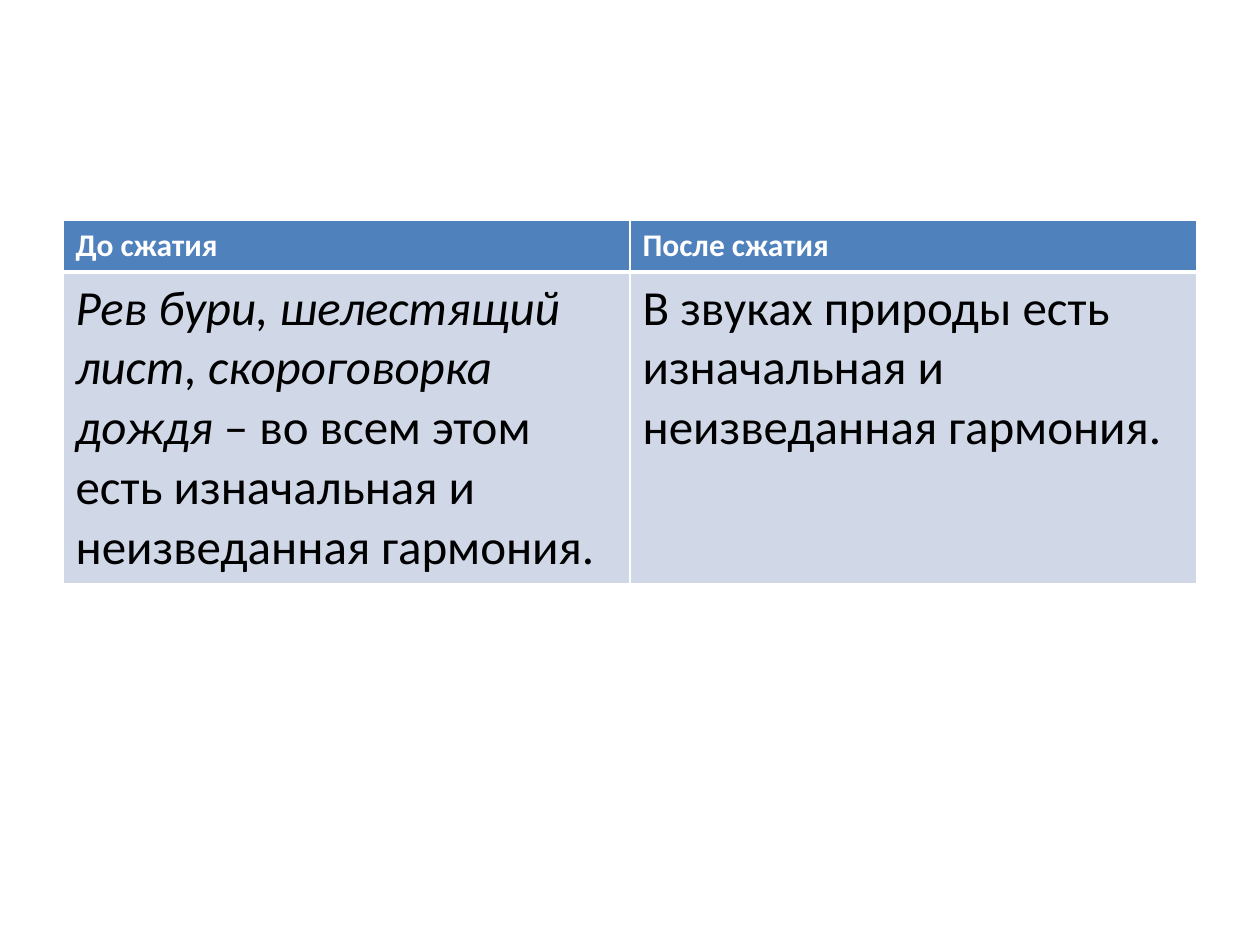
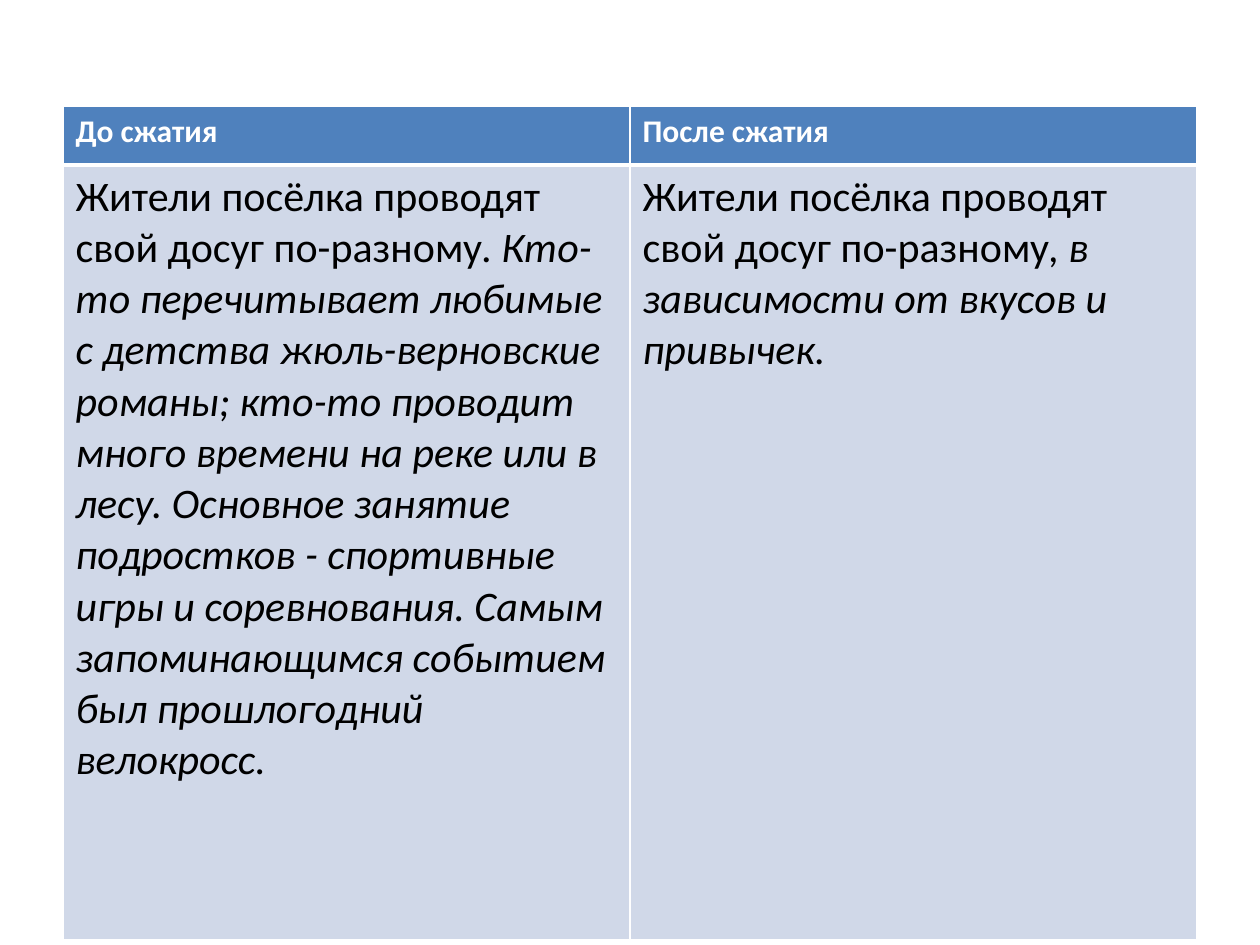
import pptx
import pptx.dml.color
import pptx.oxml
import pptx.oxml.ns
import pptx.util
from pptx.util import Inches

# Content: each body cell is a list of (text, italic) runs
HEADINGS = ("До сжатия", "После сжатия")
SLIDES = [
    {
        "top": 1.75, "rows": (0.41, 2.43), "size": 28,
        "before": [
            ("Рев бури, шелестящий лист, скороговорка дождя ", True),
            ("– во всем этом есть изначальная и неизведанная гармония.", False),
        ],
        "after": [
            ("В звуках природы есть изначальная и неизведанная гармония.", False),
        ],
    },
    {
        "top": 0.84, "rows": (0.47, 6.15), "size": 24,
        "before": [
            ("Жители посёлка проводят свой досуг по-разному. ", False),
            ("Кто-то перечитывает любимые с детства жюль-верновские романы; "
             "кто-то проводит много времени на реке или в лесу. "
             "Основное занятие подростков - спортивные игры и соревнования. "
             "Самым запоминающимся событием был прошлогодний велокросс.", True),
        ],
        "after": [
            ("Жители посёлка проводят свой досуг по-разному, ", False),
            ("в зависимости от вкусов и привычек.", True),
        ],
    },
]

# Shared style
FONT = "Calibri"
WHITE = pptx.dml.color.RGBColor(0xFF, 0xFF, 0xFF)
BLACK = pptx.dml.color.RGBColor(0x00, 0x00, 0x00)
HEADER_BLUE = pptx.dml.color.RGBColor(0x4F, 0x81, 0xBD)
BODY_BLUE = pptx.dml.color.RGBColor(0xD0, 0xD8, 0xE8)
HEADER_SIZE = 18
TABLE_LEFT, TABLE_WIDTH = 0.5, 9
THIN, THICK = 1, 3


def add_text(paragraph, text, size, color, bold=False, italic=False):
    run = paragraph.add_run()
    run.text = text
    font = run.font
    font.name, font.size = FONT, pptx.util.Pt(size)
    font.bold, font.italic = bold, italic
    font.color.rgb = color


def set_borders(cell, top=THIN, bottom=THIN):
    properties = cell._tc.get_or_add_tcPr()
    for side, width in (("L", THIN), ("R", THIN), ("T", top), ("B", bottom)):
        properties.append(pptx.oxml.parse_xml(
            f'<a:ln{side} {pptx.oxml.ns.nsdecls("a")} w="{pptx.util.Pt(width)}">'
            f'<a:solidFill><a:srgbClr val="{WHITE}"/></a:solidFill></a:ln{side}>'))


def fill_cell(cell, runs, size, color, background, bold=False, **borders):
    # Borders come before the fill in the cell properties
    set_borders(cell, **borders)
    cell.fill.solid()
    cell.fill.fore_color.rgb = background
    for text, italic in runs:
        add_text(cell.text_frame.paragraphs[0], text, size, color,
                 bold=bold, italic=italic)


def add_comparison(slide, content):
    table = slide.shapes.add_table(
        2, len(HEADINGS), Inches(TABLE_LEFT), Inches(content["top"]),
        Inches(TABLE_WIDTH), Inches(sum(content["rows"]))).table
    for row, height in zip(table.rows, content["rows"]):
        row.height = Inches(height)
    bodies = (content["before"], content["after"])
    for column, (heading, body) in enumerate(zip(HEADINGS, bodies)):
        fill_cell(table.cell(0, column), [(heading, False)], HEADER_SIZE,
                  WHITE, HEADER_BLUE, bold=True, bottom=THICK)
        fill_cell(table.cell(1, column), body, content["size"],
                  BLACK, BODY_BLUE, top=THICK)


def main():
    presentation = pptx.Presentation()
    presentation.slide_width, presentation.slide_height = Inches(10), Inches(7.5)
    for content in SLIDES:
        slide = presentation.slides.add_slide(presentation.slide_layouts[6])
        add_comparison(slide, content)
    presentation.save("out.pptx")


if __name__ == "__main__":
    main()
